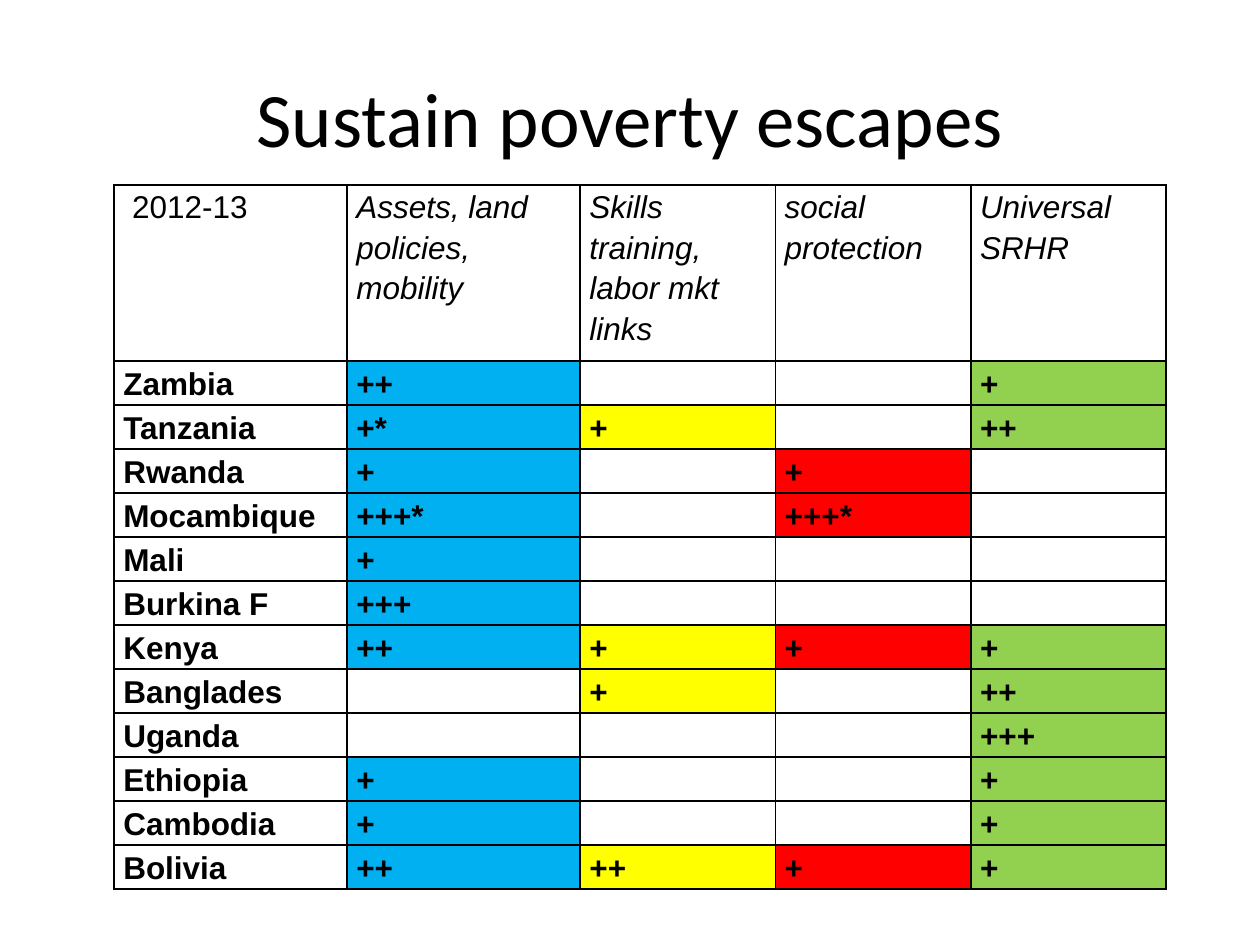
import pptx
import pptx.dml.color
import pptx.enum.text
import pptx.oxml.ns
import pptx.util
from lxml import etree

Pt = pptx.util.Pt
RGBColor = pptx.dml.color.RGBColor
qn = pptx.oxml.ns.qn

BLACK = RGBColor(0x00, 0x00, 0x00)
BLUE = RGBColor(0x00, 0xB0, 0xF0)
YELLOW = RGBColor(0xFF, 0xFF, 0x00)
RED = RGBColor(0xFF, 0x00, 0x00)
GREEN = RGBColor(0x92, 0xD0, 0x50)

HEADERS = ["2012-13", "Assets, land policies, mobility",
           "Skills training, labor mkt links", "social protection",
           "Universal SRHR"]
RATINGS = [
    ["Zambia", "++", "", "", "+"],
    ["Tanzania", "+*", "+", "", "++"],
    ["Rwanda", "+", "", "+", ""],
    ["Mocambique", "+++*", "", "+++*", ""],
    ["Mali", "+", "", "", ""],
    ["Burkina F", "+++", "", "", ""],
    ["Kenya", "++", "+", "+", "+"],
    ["Banglades", "", "+", "", "++"],
    ["Uganda", "", "", "", "+++"],
    ["Ethiopia", "+", "", "", "+"],
    ["Cambodia", "+", "", "", "+"],
    ["Bolivia", "++", "++", "+", "+"],
]
COLUMN_FILLS = [None, BLUE, YELLOW, RED, GREEN]
COLUMN_WIDTHS = [133.2, 133.2, 111.6, 111.6, 111.6]
HEADER_HEIGHT, ROW_HEIGHT = 100.8, 25.15


class SlideBuilder:
    title_font, title_size = "Calibri", 44
    table_font, table_size = "Arial", 18
    line_spacing = 1.15
    cell_margin = 5.3

    def __init__(self, slide):
        self.slide = slide

    def format_runs(self, p, font, size, bold=False, italic=False):
        for r in p.runs:
            r.font.name = font
            r.font.size = Pt(size)
            r.font.bold = bold
            r.font.italic = italic
            r.font.color.rgb = BLACK

    def title(self, text, left, top, width, height):
        sp = self.slide.shapes.title
        sp.left, sp.top, sp.width, sp.height = map(Pt, (left, top, width, height))
        tf = sp.text_frame
        tf.text = text
        tf.vertical_anchor = pptx.enum.text.MSO_ANCHOR.MIDDLE
        p = tf.paragraphs[0]
        p.alignment = pptx.enum.text.PP_ALIGN.CENTER
        self.format_runs(p, self.title_font, self.title_size)

    def borders(self, cell):
        tc_pr = cell._tc.get_or_add_tcPr()
        for side in ("a:lnL", "a:lnR", "a:lnT", "a:lnB"):
            ln = etree.SubElement(tc_pr, qn(side), w=str(Pt(1)))
            fill = etree.SubElement(ln, qn("a:solidFill"))
            etree.SubElement(fill, qn("a:srgbClr"), val=str(BLACK))

    def cell(self, cell, text, fill=None, bold=False, italic=False):
        self.borders(cell)
        cell.margin_left = cell.margin_right = Pt(self.cell_margin)
        cell.margin_top = cell.margin_bottom = 0
        if fill is None:
            cell.fill.background()
        else:
            cell.fill.solid()
            cell.fill.fore_color.rgb = fill
        p = cell.text_frame.paragraphs[0]
        p.text = text
        p.line_spacing = self.line_spacing
        self.format_runs(p, self.table_font, self.table_size, bold, italic)

    def ratings_table(self, left, top):
        heights = [HEADER_HEIGHT] + [ROW_HEIGHT] * len(RATINGS)
        table = self.slide.shapes.add_table(
            len(heights), len(COLUMN_WIDTHS), Pt(left), Pt(top),
            Pt(sum(COLUMN_WIDTHS)), Pt(sum(heights))).table
        table.first_row = table.horz_banding = False
        for column, width in zip(table.columns, COLUMN_WIDTHS):
            column.width = Pt(width)
        for row, height in zip(table.rows, heights):
            row.height = Pt(height)
        for c, text in enumerate(HEADERS):
            self.cell(table.cell(0, c), text, italic=c > 0)
        table.cell(0, 0).margin_left = Pt(self.cell_margin + 5)
        for r, values in enumerate(RATINGS, start=1):
            for c, text in enumerate(values):
                fill = COLUMN_FILLS[c] if text else None
                self.cell(table.cell(r, c), text, fill, bold=True)


def main():
    prs = pptx.Presentation()
    prs.slide_width, prs.slide_height = Pt(720), Pt(540)
    s = prs.slides.add_slide(prs.slide_layouts[5])
    builder = SlideBuilder(s)
    builder.title("Sustain poverty escapes", 36, 21.6, 648, 90)
    builder.ratings_table(65.2, 105.6)
    prs.save("out.pptx")


if __name__ == "__main__":
    main()
